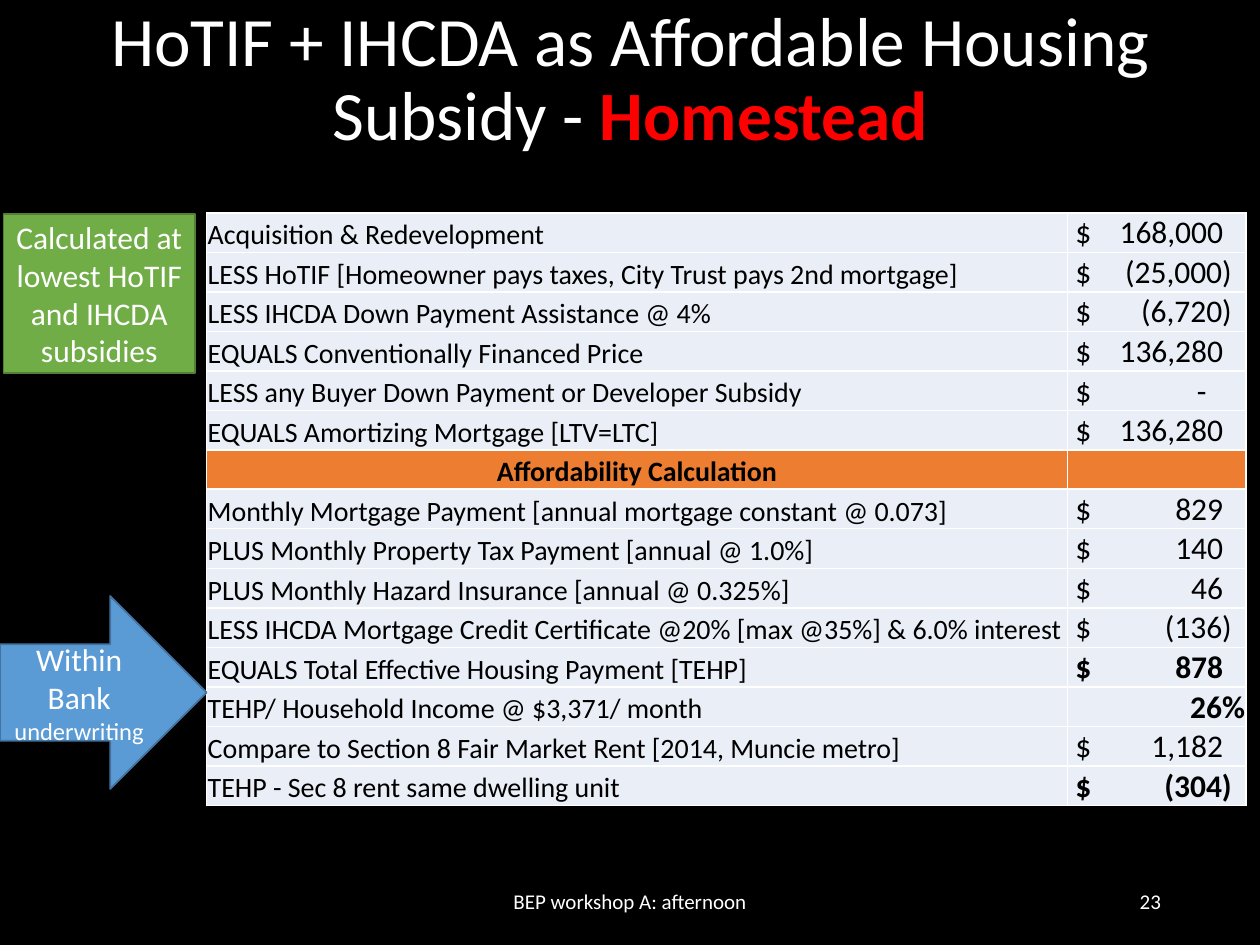
from dataclasses import dataclass

from lxml import etree
from pptx import Presentation
from pptx.dml.color import RGBColor
from pptx.enum.shapes import MSO_SHAPE
from pptx.enum.text import MSO_ANCHOR, MSO_AUTO_SIZE, PP_ALIGN
from pptx.oxml.ns import qn
from pptx.util import Pt

RECTANGLE, RIGHT_ARROW = MSO_SHAPE.RECTANGLE, MSO_SHAPE.RIGHT_ARROW
MIDDLE, BOTTOM = MSO_ANCHOR.MIDDLE, MSO_ANCHOR.BOTTOM
LEFT, CENTER, RIGHT = PP_ALIGN.LEFT, PP_ALIGN.CENTER, PP_ALIGN.RIGHT
NO_AUTOFIT = MSO_AUTO_SIZE.NONE
TITLE_ONLY = 5


@dataclass(frozen=True)
class Theme:
    font: str = "Calibri"
    black: str = "000000"
    white: str = "FFFFFF"
    red: str = "FF0000"
    cell: str = "EAEFF7"
    band: str = "ED7D31"
    green: str = "70AD47"
    green_line: str = "538035"
    blue: str = "5B9BD5"
    blue_line: str = "43739E"
    title: float = 39.6
    amount: float = 18
    label: float = 16
    small: float = 14
    footer: float = 12


THEME = Theme()

# Label, amount, amount is bold; a row without an amount is a section band.
ROWS = [
    ("Acquisition & Redevelopment", "168,000", False),
    ("LESS HoTIF [Homeowner pays taxes, City Trust pays 2nd mortgage]", "(25,000)", False),
    ("LESS IHCDA Down Payment Assistance @ 4%", "(6,720)", False),
    ("EQUALS Conventionally Financed Price", "136,280", False),
    ("LESS any Buyer Down Payment or Developer Subsidy", "-", False),
    ("EQUALS Amortizing Mortgage [LTV=LTC]", "136,280", False),
    ("Affordability Calculation", "", False),
    ("Monthly Mortgage Payment [annual mortgage constant @ 0.073]", "829", False),
    ("PLUS Monthly Property Tax Payment [annual @ 1.0%]", "140", False),
    ("PLUS Monthly Hazard Insurance [annual @ 0.325%]", "46", False),
    ("LESS IHCDA Mortgage Credit Certificate @20% [max @35%] & 6.0% interest", "(136)", False),
    ("EQUALS Total Effective Housing Payment [TEHP]", "878", True),
    ("TEHP/ Household Income @ $3,371/ month", "26%", True),
    ("Compare to Section 8 Fair Market Rent [2014, Muncie metro]", "1,182", False),
    ("TEHP - Sec 8 rent same dwelling unit", "(304)", True),
]
COLUMN_WIDTHS = (491.8, 102.2)
ROW_HEIGHT = 22.4


def rgb(value):
    return RGBColor.from_string(value)


def add_run(paragraph, text, size, color, bold=False):
    run = paragraph.add_run()
    run.text = text
    run.font.name = THEME.font
    run.font.size = Pt(size)
    run.font.bold = bold
    run.font.color.rgb = rgb(color)


def first_paragraph(shape, alignment):
    """Prepare a wrapping, vertically centred frame and return its paragraph."""
    frame = shape.text_frame
    frame.word_wrap = True
    frame.auto_size = NO_AUTOFIT
    frame.vertical_anchor = MIDDLE
    paragraph = frame.paragraphs[0]
    paragraph.alignment = alignment
    return paragraph


def set_title(slide):
    title = slide.shapes.title
    title.left, title.top, title.width, title.height = Pt(2), Pt(24), Pt(716.4), Pt(44.6)
    paragraph = first_paragraph(title, CENTER)
    paragraph.line_spacing = 0.9
    add_run(paragraph, "HoTIF + IHCDA as Affordable Housing Subsidy - ", THEME.title, THEME.white)
    add_run(paragraph, "Homestead", THEME.title, THEME.red, bold=True)


def add_footer(slide, left, width, text, alignment):
    box = slide.shapes.add_textbox(Pt(left), Pt(500.5), Pt(width), Pt(28.8))
    add_run(first_paragraph(box, alignment), text, THEME.footer, THEME.white)


def add_callout(slide, kind, box, fill, line, runs):
    """Add a filled shape; runs is a list of (text, size)."""
    shape = slide.shapes.add_shape(kind, *(Pt(length) for length in box))
    shape.shadow.inherit = False
    shape.fill.solid()
    shape.fill.fore_color.rgb = rgb(fill)
    shape.line.color.rgb = rgb(line)
    shape.line.width = Pt(1)
    paragraph = first_paragraph(shape, CENTER)
    for text, size in runs:
        add_run(paragraph, text, size, THEME.white)


def add_borders(cell):
    properties = cell._tc.get_or_add_tcPr()
    for side in ("a:lnL", "a:lnR", "a:lnT", "a:lnB"):
        line = etree.SubElement(properties, qn(side), w=str(Pt(1)))
        fill = etree.SubElement(line, qn("a:solidFill"))
        etree.SubElement(fill, qn("a:srgbClr"), val=THEME.white)


def format_cell(cell, fill):
    cell.margin_left = cell.margin_right = cell.margin_top = Pt(0.6)
    cell.margin_bottom = Pt(0)
    cell.vertical_anchor = BOTTOM
    add_borders(cell)
    cell.fill.solid()
    cell.fill.fore_color.rgb = rgb(fill)


def add_right_tab(paragraph, position):
    tabs = etree.SubElement(paragraph._p.get_or_add_pPr(), qn("a:tabLst"))
    etree.SubElement(tabs, qn("a:tab"), pos=str(Pt(position)), algn="r")


def write_amount(paragraph, amount, bold):
    """Set dollars in accounting style: sign at left, brackets past the digits."""
    if amount.endswith("%"):
        paragraph.alignment = RIGHT
        text = amount
    else:
        position = {"-": 79, "(": 93.5}.get(amount[0], 88.5)
        add_right_tab(paragraph, position)
        text = f" $\t{amount}"
    add_run(paragraph, text, THEME.amount, THEME.black, bold)


def add_calculation_table(slide):
    frame = slide.shapes.add_table(
        len(ROWS), len(COLUMN_WIDTHS), Pt(118.1), Pt(121.6),
        Pt(sum(COLUMN_WIDTHS)), Pt(ROW_HEIGHT * len(ROWS)))
    table = frame.table
    table.first_row = table.horz_banding = False
    for column, width in zip(table.columns, COLUMN_WIDTHS):
        column.width = Pt(width)
    for row, (label, amount, bold) in zip(table.rows, ROWS):
        row.height = Pt(ROW_HEIGHT)
        is_band = not amount
        for cell in row.cells:
            format_cell(cell, THEME.band if is_band else THEME.cell)
        label_paragraph, amount_paragraph = (
            cell.text_frame.paragraphs[0] for cell in row.cells)
        label_paragraph.alignment = CENTER if is_band else LEFT
        add_run(label_paragraph, label, THEME.label, THEME.black, is_band)
        if is_band:
            amount_paragraph.font.size = Pt(THEME.label)
        else:
            write_amount(amount_paragraph, amount, bold)


def main():
    presentation = Presentation()
    presentation.slide_width, presentation.slide_height = Pt(720), Pt(540)
    slide = presentation.slides.add_slide(presentation.slide_layouts[TITLE_ONLY])
    slide.background.fill.solid()
    slide.background.fill.fore_color.rgb = rgb(THEME.black)

    set_title(slide)
    add_footer(slide, 238.5, 243, "BEP workshop A: afternoon", CENTER)
    add_footer(slide, 508.5, 162, "23", RIGHT)
    add_calculation_table(slide)
    add_callout(slide, RECTANGLE, (2, 122.4, 109.4, 90.7), THEME.green, THEME.green_line,
                [("Calculated at lowest HoTIF and IHCDA subsidies", THEME.amount)])
    add_callout(slide, RIGHT_ARROW, (0, 340.6, 118.1, 110.2), THEME.blue, THEME.blue_line,
                [("Within Bank ", THEME.amount), ("underwriting", THEME.small)])
    presentation.save("out.pptx")


if __name__ == "__main__":
    main()
